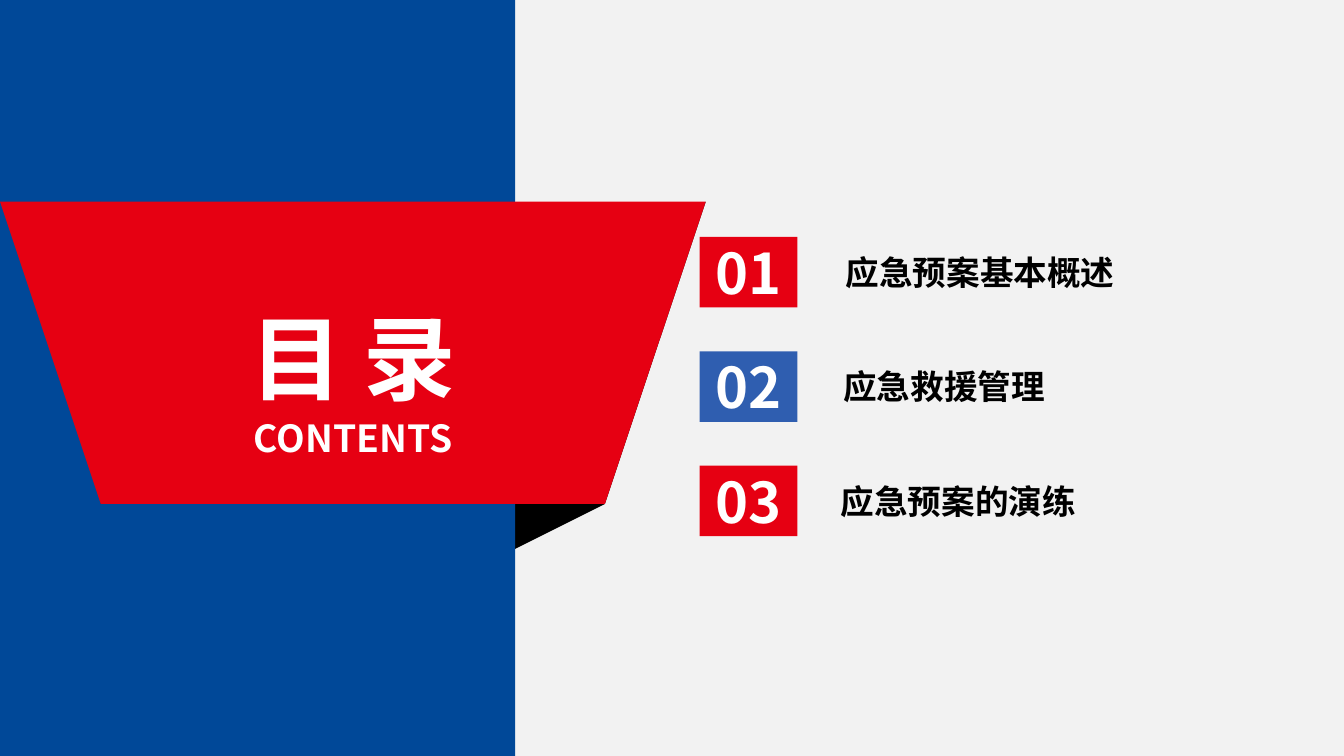
from dataclasses import dataclass

from pptx import Presentation
from pptx.dml.color import RGBColor
from pptx.enum.shapes import MSO_SHAPE
from pptx.enum.text import MSO_ANCHOR, MSO_AUTO_SIZE, PP_ALIGN
from pptx.oxml.ns import qn
from pptx.util import Inches, Pt

RECT = MSO_SHAPE.RECTANGLE
MIDDLE = MSO_ANCHOR.MIDDLE
NO_FIT = MSO_AUTO_SIZE.NONE
LEFT, CENTER = PP_ALIGN.LEFT, PP_ALIGN.CENTER


@dataclass(frozen=True)
class Theme:
    font: str = "Noto Sans CJK SC"
    page: str = "F2F2F2"
    panel: str = "004898"
    red: str = "E60012"
    blue: str = "2F5EB0"
    black: str = "000000"
    fold: str = "0D0D0D"
    white: str = "FFFFFF"
    title: float = 66
    subtitle: float = 26.6
    number: float = 40
    item: float = 24


T = Theme()

TITLE, SUBTITLE = "目 录", "CONTENTS"
ITEMS = [
    ("01", "应急预案基本概述", T.red),
    ("02", "应急救援管理", T.blue),
    ("03", "应急预案的演练", T.red),
]
RIBBON_SHADOW = [(5.78, 5.29), (3.69, 6.01), (6.53, 2.37)]
RIBBON = [
    ([(5.78, 5.29), (1.3, 5.29), (0.52, 2.4), (6.53, 2.37)], T.red),
    ([(0.56, 2.42), (1.32, 2.4), (1.3, 5.28)], T.fold),
    ([(0.36, 2.49), (1.04, 2.04), (1.3, 5.28)], T.red),
]

SLIDE_W, SLIDE_H = 13.33, 7.5
PANEL_W = 5.11
NUMBER_X, NUMBER_Y, NUMBER_W, NUMBER_H = 6.94, 2.35, 0.97, 0.7
LABEL_X, LABEL_W, LABEL_H = 8.29, 4.5, 1.14
ROW_PITCH, LABEL_STEP = 1.135, -0.025


def color(value):
    return RGBColor.from_string(value)


def paint(sp, fill):
    sp.shadow.inherit = False
    sp.fill.solid()
    sp.fill.fore_color.rgb = color(fill)
    sp.line.fill.background()


def add_rect(shapes, box, fill):
    s = shapes.add_shape(RECT, *map(Inches, box))
    paint(s, fill)
    return s


def add_polygon(shapes, points, fill):
    builder = shapes.build_freeform(*points[0], scale=Inches(1))
    builder.add_line_segments(points[1:], close=True)
    paint(builder.convert_to_shape(), fill)


def write(sp, text, size, ink, align, wrap=True, inset=None):
    tf = sp.text_frame
    tf.auto_size = NO_FIT
    tf.word_wrap = wrap
    tf.vertical_anchor = MIDDLE
    if inset is not None:
        tf.margin_left = tf.margin_right = inset
        tf.margin_top = tf.margin_bottom = inset
    p = tf.paragraphs[0]
    p.text = text
    p.alignment = align
    p.font.size = Pt(size)
    p.font.bold = True
    p.font.color.rgb = color(ink)
    p.font.name = T.font
    latin = p.font._element.find(qn("a:latin"))
    ea = latin.makeelement(qn("a:ea"), {"typeface": T.font})
    latin.addnext(ea)


def main():
    prs = Presentation()
    prs.slide_width, prs.slide_height = Inches(SLIDE_W), Inches(SLIDE_H)
    slide = prs.slides.add_slide(prs.slide_layouts[5])
    slide.background.fill.solid()
    slide.background.fill.fore_color.rgb = color(T.page)
    shapes = slide.shapes

    add_polygon(shapes, RIBBON_SHADOW, T.black)
    add_rect(shapes, (0, 0, PANEL_W, SLIDE_H), T.panel)
    for points, fill in RIBBON:
        add_polygon(shapes, points, fill)

    title = shapes.title
    title.left, title.top = Inches(2.45), Inches(2.98)
    title.width, title.height = Inches(2.11), Inches(1.11)
    write(title, TITLE, T.title, T.white, CENTER, wrap=False, inset=0)
    shapes._spTree.append(title._element)

    subtitle = shapes.add_textbox(*map(Inches, (2.47, 4.12, 2.07, 0.45)))
    write(subtitle, SUBTITLE, T.subtitle, T.white, CENTER, wrap=False, inset=0)

    for i, (number, label, fill) in enumerate(ITEMS):
        y = NUMBER_Y + i * ROW_PITCH
        s = add_rect(shapes, (NUMBER_X, y, NUMBER_W, NUMBER_H), fill)
        write(s, number, T.number, T.white, CENTER)
        label_box = (LABEL_X + i * LABEL_STEP, y + (NUMBER_H - LABEL_H) / 2, LABEL_W, LABEL_H)
        s = shapes.add_textbox(*map(Inches, label_box))
        write(s, label, T.item, T.black, LEFT)

    prs.save("out.pptx")


if __name__ == "__main__":
    main()
